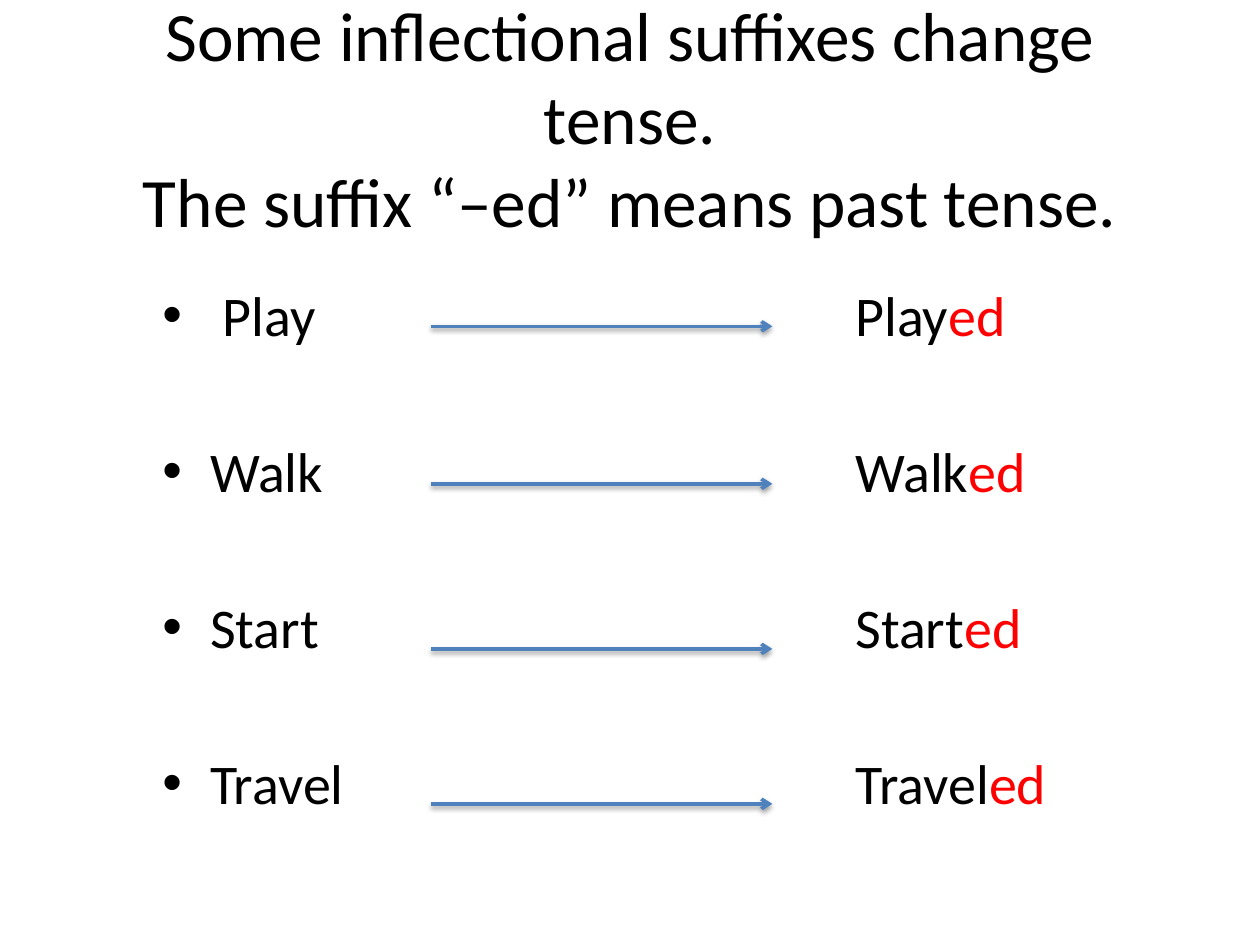
from lxml.etree import SubElement
from pptx import Presentation
from pptx.dml.color import RGBColor
from pptx.enum.shapes import MSO_CONNECTOR
from pptx.enum.text import MSO_ANCHOR, MSO_AUTO_SIZE, PP_ALIGN
from pptx.oxml.ns import qn
from pptx.util import Inches, Pt

HUES = {"ink": "000000", "mark": "FF0000", "line": "4F81BD"}
FONT = {"name": "Calibri"}
FRAME = {"word_wrap": True, "auto_size": MSO_AUTO_SIZE.NONE}
TITLE = "Some inflectional suffixes change tense.\vThe suffix “–ed” means past tense."
VERBS = ["Play", "Walk", "Start", "Travel"]
ROWS = [2.59, 3.84, 5.15, 6.38]


def apply(item, vals):
    """Set each named value on an item."""
    for key, val in vals.items():
        setattr(item, key, val)


def style(run, size, hue):
    """Give a run its font, size and colour."""
    apply(run.font, {**FONT, "size": Pt(size)})
    run.font.color.rgb = RGBColor.from_string(HUES[hue])


def node(root, tag, **vals):
    """Add an XML child with the given attributes."""
    return SubElement(root, qn(tag), {key: str(val) for key, val in vals.items()})


def add_title(slide, left, top, width, height):
    """Place and format the title."""
    title = slide.shapes.title
    apply(title, {"left": Inches(left), "top": Inches(top),
                  "width": Inches(width), "height": Inches(height)})
    frame = title.text_frame
    apply(frame, {**FRAME, "vertical_anchor": MSO_ANCHOR.MIDDLE})
    frame.text = TITLE
    para = frame.paragraphs[0]
    para.alignment = PP_ALIGN.CENTER
    for run in para.runs:
        style(run, 39.6, "ink")


def add_verbs(slide, left, top, width, height):
    """List each verb with its past tense at a tab stop."""
    box = slide.shapes.add_textbox(*map(Inches, (left, top, width, height)))
    frame = box.text_frame
    apply(frame, FRAME)
    for index, verb in enumerate(VERBS):
        para = frame.add_paragraph() if index else frame.paragraphs[0]
        para.space_before = Pt(50.6 if index else 0)
        props = para._p.get_or_add_pPr()
        props.set("marL", str(Inches(0.38)))
        props.set("indent", str(Inches(-0.38)))
        node(props, "a:buFont", typeface="Arial")
        node(props, "a:buChar", char="•")
        tabs = node(props, "a:tabLst")
        node(tabs, "a:tab", pos=Inches(5.5), algn="l")
        lead = "" if index else " "
        for text, hue in ((f"{lead}{verb}\t{verb}", "ink"), ("ed", "mark")):
            run = para.add_run()
            run.text = text
            style(run, 32, hue)


def add_arrow(slide, left, top, width):
    """Draw one arrow with a soft shadow below it."""
    start, end, level = Inches(left), Inches(left + width), Inches(top)
    arrow = slide.shapes.add_connector(MSO_CONNECTOR.STRAIGHT, start, level, end, level)
    arrow.line.width = Pt(2)
    arrow.line.color.rgb = RGBColor.from_string(HUES["line"])
    node(arrow.line._get_or_add_ln(), "a:tailEnd", type="arrow")
    effects = node(arrow._element.spPr, "a:effectLst")
    shade = node(effects, "a:outerShdw", blurRad=Pt(3.1), dist=Pt(1.6),
                 dir=90 * 60000, rotWithShape=0)
    hue = node(shade, "a:srgbClr", val=HUES["ink"])
    node(hue, "a:alpha", val=38000)


def main():
    """Build and save the slide."""
    deck = Presentation()
    apply(deck, {"slide_width": Inches(10), "slide_height": Inches(7.5)})
    slide = deck.slides.add_slide(deck.slide_layouts[5])
    add_title(slide, 0.5, 0.3, 9, 1.25)
    add_verbs(slide, 1.19, 2.18, 9, 4.95)
    for top in ROWS:
        add_arrow(slide, 3.42, top, 2.71)
    deck.save("out.pptx")


if __name__ == "__main__":
    main()
